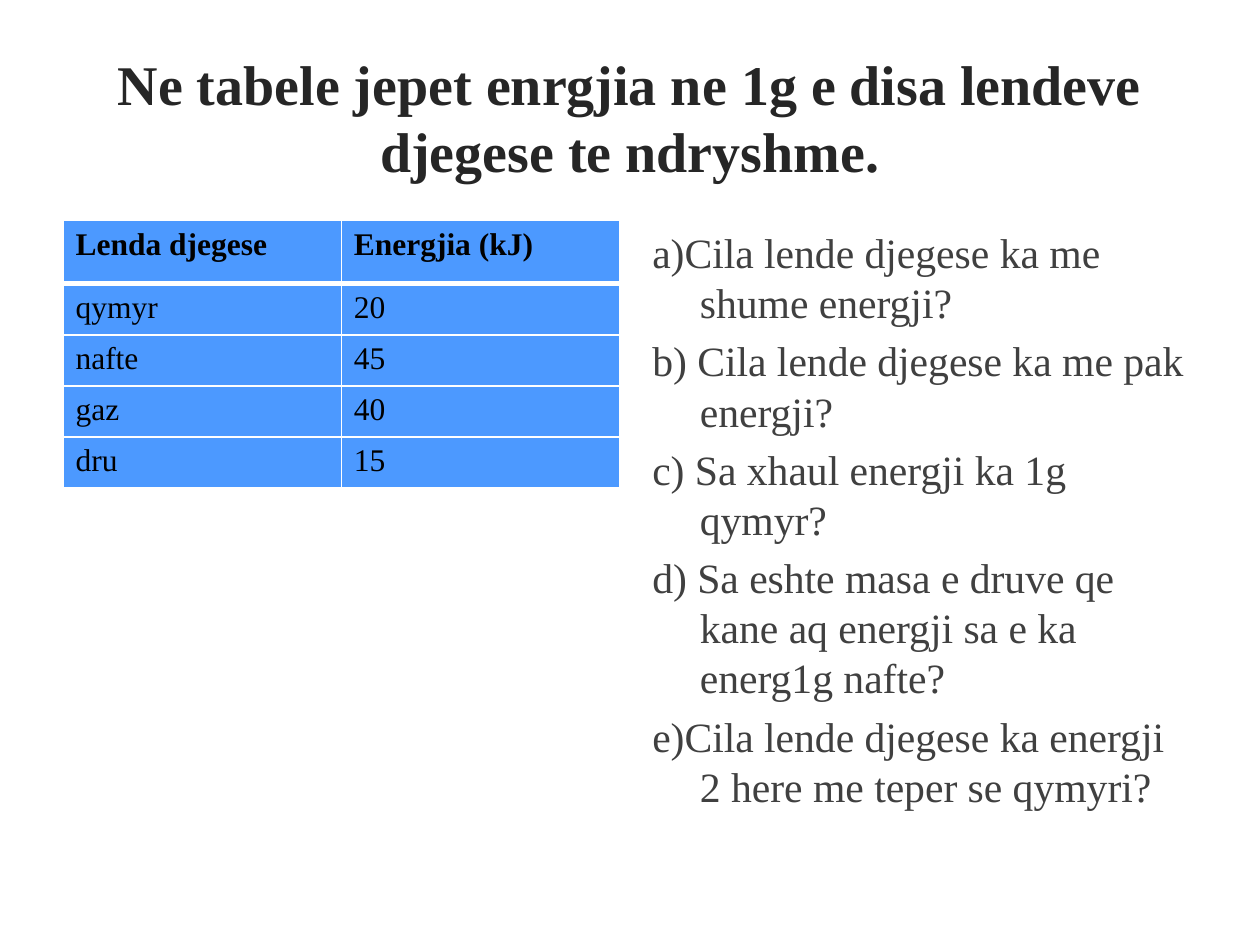
from lxml.etree import SubElement
from pptx import Presentation
from pptx.dml.color import RGBColor as Rgb
from pptx.enum.text import MSO_ANCHOR as Anchor, PP_ALIGN as Align
from pptx.oxml.ns import qn
from pptx.util import Cm, Pt

FACE = "Times New Roman"
BLUE, WHITE = "4C99FF", "FFFFFF"
HEAD = {"name": FACE, "size": Pt(32), "bold": True}
BODY = {"name": FACE, "size": Pt(23.8), "bold": False}
CELL = {"name": FACE, "size": Pt(18)}


def style(para, form, color):
    for key, value in form.items():
        setattr(para.font, key, value)
    para.font.color.rgb = Rgb.from_string(color)


def edge(cell, sides):
    """Draw white borders; sides maps an edge tag to a width in points."""
    props = cell._tc.get_or_add_tcPr()
    for at, (tag, width) in enumerate(sides.items()):
        line = SubElement(props, qn("a:" + tag), w=str(Pt(width)))
        fill = SubElement(line, qn("a:solidFill"))
        SubElement(fill, qn("a:srgbClr"), val=WHITE)
        props.insert(at, line)


deck = Presentation()
deck.slide_width, deck.slide_height = Cm(25.4), Cm(19.05)
slide = deck.slides.add_slide(deck.slide_layouts[6])
shapes = slide.shapes

# Title
title = shapes.add_textbox(Cm(1.27), Cm(0.76), Cm(22.86), Cm(3.18)).text_frame
title.word_wrap = True
title.vertical_anchor = Anchor.MIDDLE
para = title.paragraphs[0]
para.text = "Ne tabele jepet enrgjia ne 1g e disa lendeve djegese te ndryshme."
para.alignment = Align.CENTER
para.line_spacing = Pt(38.4)
style(para, HEAD, "262626")

# Energy table
data = [
    ("Lenda djegese", "Energjia (kJ)"),
    ("qymyr", "20"),
    ("nafte", "45"),
    ("gaz", "40"),
    ("dru", "15"),
]
table = shapes.add_table(len(data), 2, Cm(1.27), Cm(4.45),
                         Cm(11.22), Cm(5.4)).table
for col in table.columns:
    col.width = Cm(5.61)
for i, words in enumerate(data):
    table.rows[i].height = Cm(1.27 if i == 0 else 1.03)
    for j, word in enumerate(words):
        cell = table.cell(i, j)
        cell.text = word
        cell.fill.solid()
        cell.fill.fore_color.rgb = Rgb.from_string(BLUE)
        style(cell.text_frame.paragraphs[0], CELL | {"bold": i == 0}, "000000")
        edge(cell, {"lnL": 1, "lnR": 1, "lnT": 3 if i == 1 else 1,
                    "lnB": 3 if i == 0 else 1})

# Questions, with a hanging indent
asks = [
    "a)Cila lende djegese ka me shume energji?",
    "b) Cila lende djegese ka me pak energji?",
    "c) Sa xhaul energji ka 1g qymyr?",
    "d) Sa eshte masa e druve qe kane aq energji sa e ka energ1g nafte?",
    "e)Cila lende djegese ka energji 2 here me teper se qymyri?",
]
frame = shapes.add_textbox(Cm(12.9), Cm(4.45), Cm(11.23), Cm(12.57)).text_frame
frame.word_wrap = True
for i, ask in enumerate(asks):
    para = frame.add_paragraph() if i else frame.paragraphs[0]
    para.text = ask
    para.line_spacing = Pt(28.6)
    para.space_before = Pt(4.7 if i else 0)
    props = para._p.get_or_add_pPr()
    props.set("marL", str(Cm(0.96)))
    props.set("indent", str(Cm(-0.96)))
    style(para, BODY, "404040")

deck.save("out.pptx")
